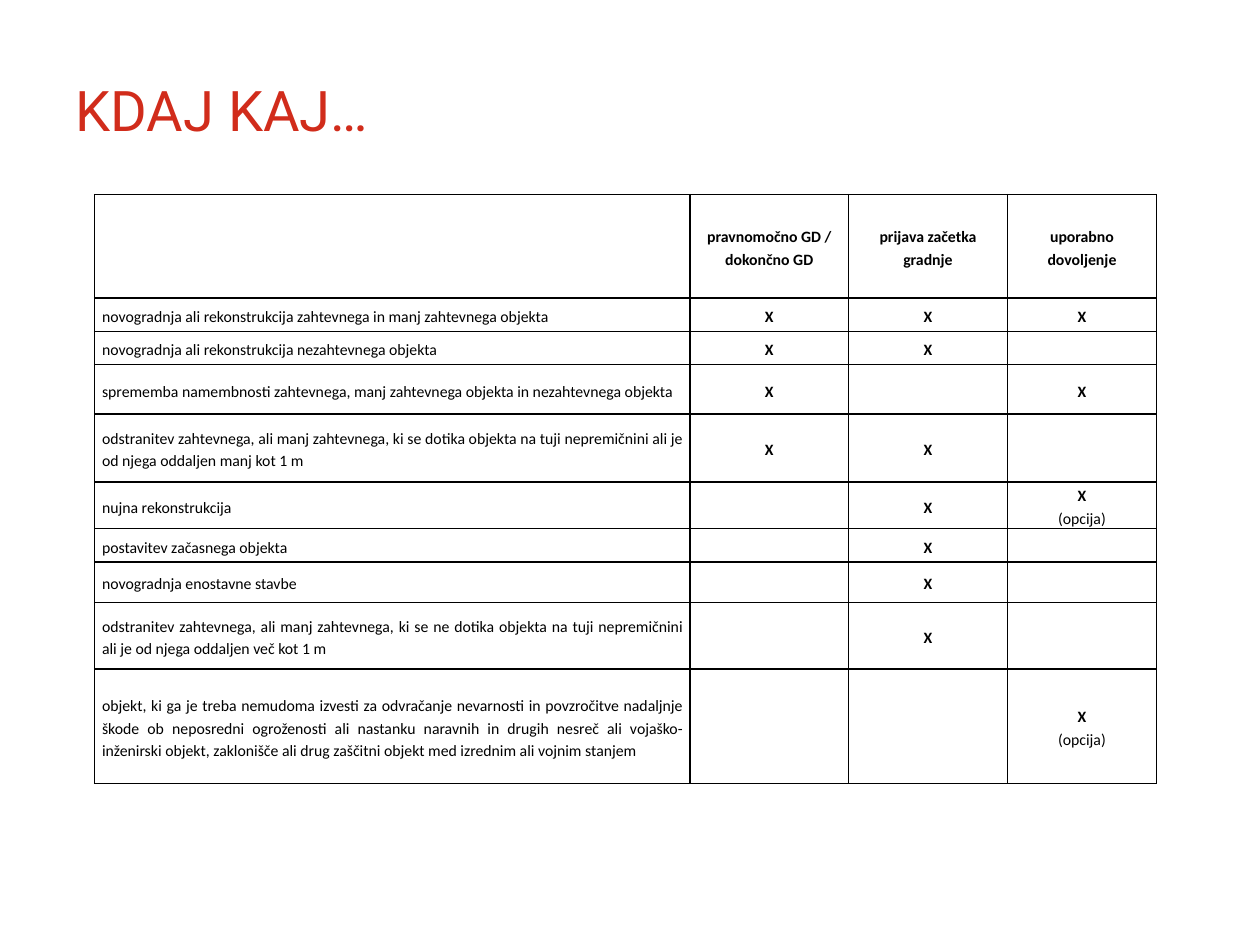
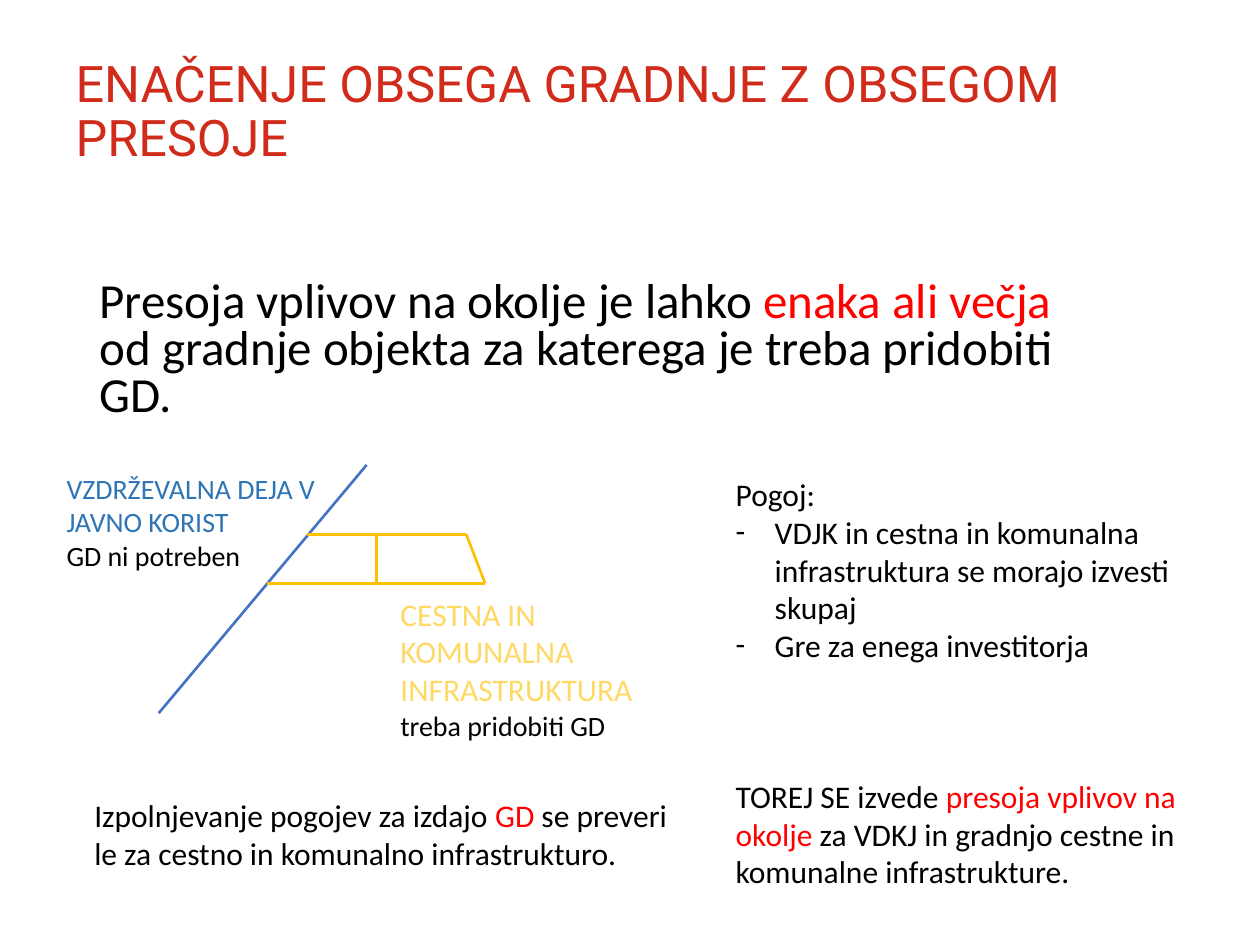
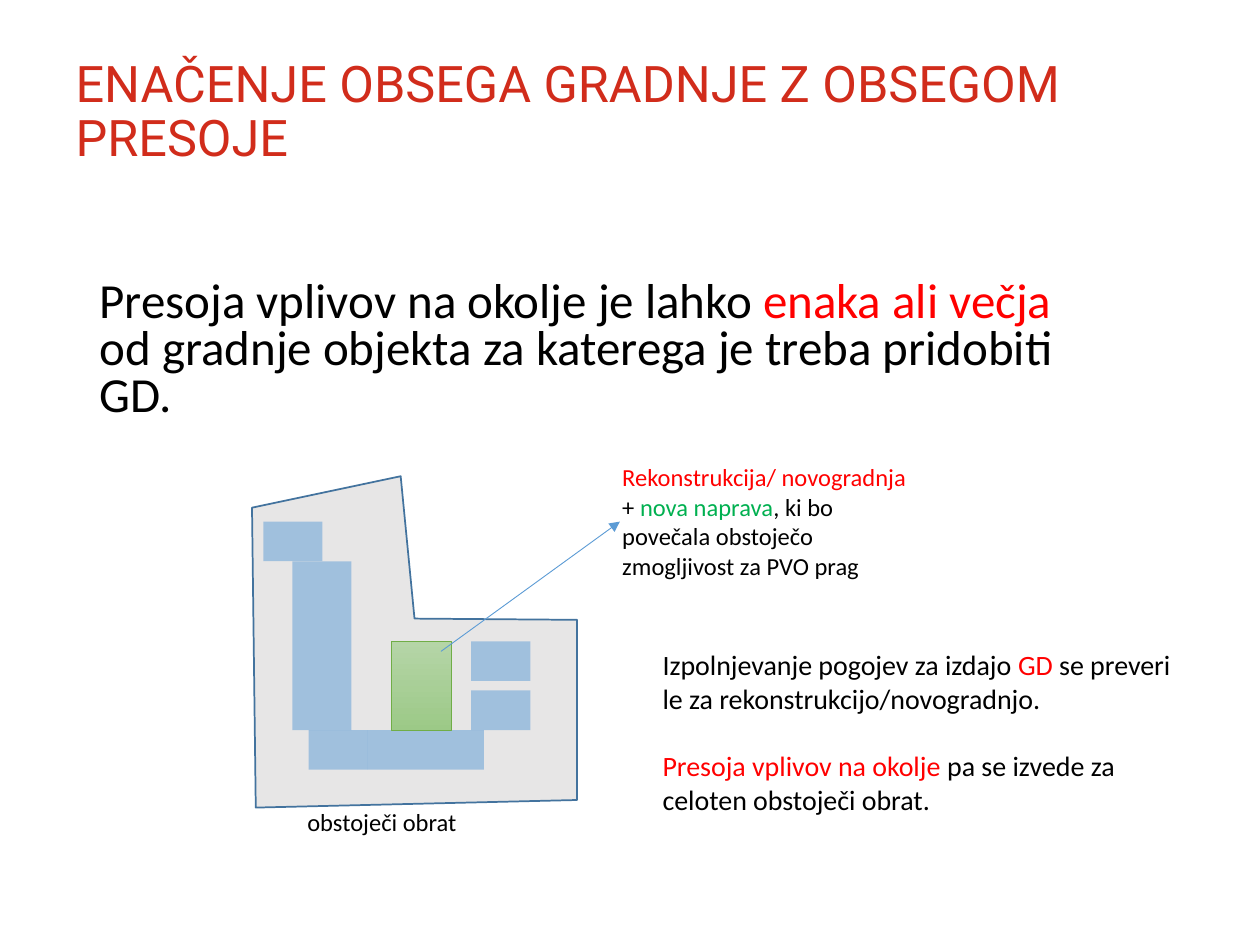
"""Build three slides on when building permits and impact assessments are required."""
from dataclasses import dataclass

from lxml.etree import SubElement
from pptx import Presentation
from pptx.dml.color import RGBColor
from pptx.enum.shapes import MSO_CONNECTOR, MSO_SHAPE
from pptx.enum.text import MSO_ANCHOR, MSO_AUTO_SIZE, PP_ALIGN
from pptx.oxml.ns import qn
from pptx.util import Emu, Inches, Pt

SLIDE_WIDTH, SLIDE_HEIGHT = Inches(10), Inches(7.5)
GRID_COLUMNS, GRID_ROWS = 100, 75

BLACK = RGBColor(0x00, 0x00, 0x00)
RED = RGBColor(0xFF, 0x00, 0x00)
TITLE_RED = RGBColor(0xD1, 0x2C, 0x1B)
GREEN = RGBColor(0x00, 0xB0, 0x50)
TEXT_BLUE = RGBColor(0x2E, 0x75, 0xB6)
ROAD_BLUE = RGBColor(0x44, 0x72, 0xC4)
STREET_GOLD = RGBColor(0xFF, 0xC0, 0x00)
TEXT_GOLD = RGBColor(0xFF, 0xD9, 0x66)
BUILDING_BLUE = RGBColor(0x5B, 0x9B, 0xD5)
PLOT_GREY = RGBColor(0xE7, 0xE6, 0xE6)
PLOT_EDGE = RGBColor(0x43, 0x73, 0x9E)
DEVICE_TOP = RGBColor(0xB5, 0xD5, 0xA7)
DEVICE_BOTTOM = RGBColor(0x9C, 0xC9, 0x87)
DEVICE_EDGE = RGBColor(0x70, 0xAD, 0x47)

BODY_FONT, TITLE_FONT = "Calibri", "Roboto"
TITLE_LAYOUT, BODY_LAYOUT = 5, 1
TABLE_SIZE = 9
SCOPE_TITLE = "ENAČENJE OBSEGA GRADNJE Z OBSEGOM PRESOJE"


@dataclass(frozen=True)
class Frame:
    """Position and size in grid columns and rows."""
    left: float
    top: float
    width: float
    height: float

    def lengths(self) -> tuple:
        """Return the frame as slide lengths."""
        return column(self.left), row(self.top), column(self.width), row(self.height)


@dataclass(frozen=True)
class Span:
    """Text in one colour."""
    text: str
    color: RGBColor = BLACK
    bold: bool = False


@dataclass(frozen=True)
class Para:
    """Paragraph of spans in one size."""
    spans: tuple
    size: float
    gap: float = 0
    dashed: bool = False


@dataclass(frozen=True)
class Note:
    """Text box with its paragraphs."""
    frame: Frame
    paras: tuple
    top_inset: float = 0.5


@dataclass(frozen=True)
class Stroke:
    """Straight line between two grid points."""
    start: tuple
    end: tuple
    color: RGBColor
    weight: float = 1.5
    arrow: bool = False


TITLE_FRAME = Frame(5, 4.15, 90, 9.7)
BODY_FRAME = Frame(6.9, 21.8, 81.7, 12.6)
STATEMENT = (
    Span("Presoja vplivov na okolje je lahko "),
    Span("enaka ali večja ", RED),
    Span("od gradnje objekta za katerega je treba pridobiti GD."),
)

TABLE_FRAME = Frame(7.5, 15.45, 84.3, 46.8)
TABLE_COLUMNS = (47.25, 12.6, 12.6, 11.85)
TABLE_ROWS = (8.2, 2.65, 2.65, 3.9, 5.4, 3.7, 2.65, 3.2, 5.3, 9.1)
HEADINGS = ("", "pravnomočno GD / dokončno GD", "prijava začetka gradnje", "uporabno dovoljenje")
YES, OPTION = "X", "X\n(opcija)"
CASES = (
    ("novogradnja ali rekonstrukcija zahtevnega in manj zahtevnega objekta", YES, YES, YES),
    ("novogradnja ali rekonstrukcija nezahtevnega objekta", YES, YES, ""),
    ("sprememba namembnosti zahtevnega, manj zahtevnega objekta in nezahtevnega objekta",
     YES, "", YES),
    ("odstranitev zahtevnega, ali manj zahtevnega, ki se dotika objekta na tuji nepremičnini "
     "ali je od njega oddaljen manj kot 1 m", YES, YES, ""),
    ("nujna rekonstrukcija", "", YES, OPTION),
    ("postavitev začasnega objekta", "", YES, ""),
    ("novogradnja enostavne stavbe", "", YES, ""),
    ("odstranitev zahtevnega, ali manj zahtevnega, ki se ne dotika objekta na tuji "
     "nepremičnini ali je od njega oddaljen več kot 1 m", "", YES, ""),
    ("objekt, ki ga je treba nemudoma izvesti za odvračanje nevarnosti in povzročitve "
     "nadaljnje škode ob neposredni ogroženosti ali nastanku naravnih in drugih nesreč ali "
     "vojaško-inženirski objekt, zaklonišče ali drug zaščitni objekt med izrednim ali vojnim "
     "stanjem", "", "", OPTION),
)

ROADS = (
    Stroke((12.6, 56.6), (29.1, 36.9), ROAD_BLUE),
    Stroke((24.4, 42.4), (37, 42.4), STREET_GOLD),
    Stroke((21.2, 46.3), (38.5, 46.3), STREET_GOLD),
    Stroke((37, 42.4), (38.5, 46.3), STREET_GOLD),
    Stroke((29.9, 42.4), (29.9, 46.3), STREET_GOLD),
)
ROAD_LABELS = (
    Note(Frame(4.3, 36.9, 22, 9.1), (
        Para((Span("VZDRŽEVALNA DEJA V JAVNO KORIST", TEXT_BLUE),), 16),
        Para((Span("GD ni potreben"),), 16),
    )),
    Note(Frame(30.8, 46.7, 23.6, 13.1), (
        Para((Span("CESTNA IN KOMUNALNA INFRASTRUKTURA", TEXT_GOLD),), 18),
        Para((Span("treba pridobiti GD"),), 16),
    )),
)
ROAD_NOTES = (
    Note(Frame(57.4, 31.2, 38.2, 43.4), (
        Para((Span("Pogoj:"),), 18),
        Para((Span("VDJK in cestna in komunalna infrastruktura se morajo izvesti skupaj"),),
             18, dashed=True),
        Para((Span("Gre za enega investitorja"),), 18, dashed=True),
        Para((Span("TOREJ SE izvede "), Span("presoja vplivov na okolje", RED),
              Span(" za VDKJ in gradnjo cestne in komunalne infrastrukture.")), 18, gap=64.5),
    ), top_inset=6.5),
    Note(Frame(6.5, 62.7, 49.4, 7.1), (
        Para((Span("Izpolnjevanje pogojev za izdajo "), Span("GD", RED),
              Span(" se preveri le za cestno in komunalno infrastrukturo.")), 18),
    )),
)

PLOT_CORNERS = ((20, 40.3), (20.3, 64.1), (45.8, 63.5), (45.8, 49.2), (32.9, 49.1), (31.8, 37.8))
BUILDINGS = (
    Frame(24.5, 57.95, 4.7, 3.15),
    Frame(37.4, 50.9, 4.7, 3.15),
    Frame(37.4, 54.8, 4.7, 3.15),
    Frame(29.2, 57.95, 9.2, 3.15),
    Frame(20.9, 41.4, 4.7, 3.15),
    Frame(23.2, 44.55, 4.7, 13.4),
)
DEVICE = Frame(31.1, 50.9, 4.7, 7.1)
DEVICE_ARROW = Stroke((35, 51.7), (49.2, 41.4), BUILDING_BLUE, 0.5, arrow=True)
PLANT_NOTES = (
    Note(Frame(48.4, 36.2, 24.6, 10.4), (
        Para((Span("Rekonstrukcija/ novogradnja ", RED), Span("+ "), Span("nova naprava", GREEN),
              Span(", ki bo povečala obstoječo zmogljivost za PVO prag")), 14),
    )),
    Note(Frame(23.4, 63.6, 19.1, 3.4), (Para((Span("obstoječi obrat"),), 14),)),
    Note(Frame(51.6, 50.9, 42.5, 17.5), (
        Para((Span("Izpolnjevanje pogojev za izdajo "), Span("GD", RED),
              Span(" se preveri le za rekonstrukcijo/novogradnjo.")), 16),
        Para((Span("Presoja vplivov na okolje", RED),
              Span(" pa se izvede za celoten obstoječi obrat.")), 16, gap=19.5),
    )),
)


def column(count: float) -> Emu:
    """Return the width of some grid columns."""
    return Emu(round(SLIDE_WIDTH * count / GRID_COLUMNS))


def row(count: float) -> Emu:
    """Return the height of some grid rows."""
    return Emu(round(SLIDE_HEIGHT * count / GRID_ROWS))


def place(shape, frame: Frame) -> None:
    """Move and size a shape to a frame."""
    shape.left, shape.top, shape.width, shape.height = frame.lengths()


def add_span(para, span: Span, size: float, font: str = BODY_FONT) -> None:
    """Append one formatted run to a paragraph."""
    run = para.add_run()
    run.text = span.text
    run.font.name = font
    run.font.size = Pt(size)
    run.font.bold = span.bold
    run.font.color.rgb = span.color


def set_bullet(para, indent: Emu = Emu(0), mark: str = "") -> None:
    """Give a paragraph a hanging mark, or none."""
    properties = para._p.get_or_add_pPr()
    properties.set("marL", str(indent))
    properties.set("indent", str(-indent))
    if mark:
        SubElement(properties, qn("a:buFont")).set("typeface", BODY_FONT)
        SubElement(properties, qn("a:buChar")).set("char", mark)
    else:
        SubElement(properties, qn("a:buNone"))


def add_page(deck, layout: int, title: str, size: float):
    """Add a slide with its formatted title."""
    page = deck.slides.add_slide(deck.slide_layouts[layout])
    box = page.shapes.title
    place(box, TITLE_FRAME)
    frame = box.text_frame
    frame.auto_size = MSO_AUTO_SIZE.NONE
    frame.vertical_anchor = MSO_ANCHOR.MIDDLE
    para = frame.paragraphs[0]
    para.alignment = PP_ALIGN.LEFT
    para.line_spacing = 0.9
    add_span(para, Span(title, TITLE_RED), size, TITLE_FONT)
    return page


def add_scope_page(deck):
    """Add a slide with the shared title and statement."""
    page = add_page(deck, BODY_LAYOUT, SCOPE_TITLE, 28.8)
    box = page.placeholders[1]
    place(box, BODY_FRAME)
    box.text_frame.auto_size = MSO_AUTO_SIZE.NONE
    para = box.text_frame.paragraphs[0]
    para.line_spacing = 0.8
    para.space_before = Pt(10)
    set_bullet(para)
    for span in STATEMENT:
        add_span(para, span, 28)
    return page


def add_note(shapes, note: Note) -> None:
    """Draw a wrapped text box."""
    frame = shapes.add_textbox(*note.frame.lengths()).text_frame
    frame.word_wrap = True
    frame.margin_top = row(note.top_inset)
    for index, item in enumerate(note.paras):
        para = frame.add_paragraph() if index else frame.paragraphs[0]
        para.space_before = Pt(item.gap)
        if item.dashed:
            set_bullet(para, column(3.1), "-")
        for span in item.spans:
            add_span(para, span, item.size)


def add_stroke(shapes, stroke: Stroke) -> None:
    """Draw a straight line or arrow."""
    (left, top), (right, bottom) = stroke.start, stroke.end
    line = shapes.add_connector(
        MSO_CONNECTOR.STRAIGHT, column(left), row(top), column(right), row(bottom))
    line.line.color.rgb = stroke.color
    line.line.width = Pt(stroke.weight)
    properties = line.element.spPr
    if stroke.arrow:
        SubElement(properties.find(qn("a:ln")), qn("a:tailEnd")).set("type", "triangle")
    SubElement(properties, qn("a:effectLst"))


def add_building(shapes, frame: Frame) -> None:
    """Draw a half-transparent building."""
    building = shapes.add_shape(MSO_SHAPE.RECTANGLE, *frame.lengths())
    building.shadow.inherit = False
    building.fill.solid()
    building.fill.fore_color.rgb = BUILDING_BLUE
    color = building.element.spPr.find(qn("a:solidFill")).find(qn("a:srgbClr"))
    SubElement(color, qn("a:alpha")).set("val", "50000")
    building.line.fill.background()


def add_plot(shapes) -> None:
    """Draw the outline of the plant's land."""
    corners = [(column(left), row(top)) for left, top in PLOT_CORNERS]
    builder = shapes.build_freeform(*corners[0])
    builder.add_line_segments(corners[1:], close=True)
    plot = builder.convert_to_shape()
    plot.shadow.inherit = False
    plot.fill.solid()
    plot.fill.fore_color.rgb = PLOT_GREY
    plot.line.color.rgb = PLOT_EDGE
    plot.line.width = Pt(1)


def add_device(shapes) -> None:
    """Draw the new device with a vertical gradient."""
    device = shapes.add_shape(MSO_SHAPE.RECTANGLE, *DEVICE.lengths())
    device.shadow.inherit = False
    device.fill.gradient()
    device.fill.gradient_angle = 270
    for stop, color in zip(device.fill.gradient_stops, (DEVICE_TOP, DEVICE_BOTTOM)):
        stop.color.rgb = color
    device.line.color.rgb = DEVICE_EDGE
    device.line.width = Pt(0.5)


def set_borders(cell) -> None:
    """Rule all four sides of a cell."""
    properties = cell._tc.get_or_add_tcPr()
    for side in ("a:lnL", "a:lnR", "a:lnT", "a:lnB"):
        line = SubElement(properties, qn(side))
        line.set("w", str(Pt(1)))
        fill = SubElement(line, qn("a:solidFill"))
        SubElement(fill, qn("a:srgbClr")).set("val", str(BLACK))


def fill_cell(cell, text: str, heading: bool, first: bool) -> None:
    """Format a table cell and write its lines."""
    set_borders(cell)
    cell.fill.background()
    cell.vertical_anchor = MSO_ANCHOR.MIDDLE
    cell.margin_left = cell.margin_right = column(0.6)
    cell.margin_top, cell.margin_bottom = row(0.1), 0
    for index, line in enumerate(text.split("\n")):
        para = cell.text_frame.add_paragraph() if index else cell.text_frame.paragraphs[0]
        para.alignment = PP_ALIGN.JUSTIFY if first else PP_ALIGN.CENTER
        para.line_spacing = Pt(13)
        if line:
            add_span(para, Span(line, bold=heading or line == YES), TABLE_SIZE)
        else:
            SubElement(para._p, qn("a:endParaRPr")).set("sz", str(TABLE_SIZE * 100))


def add_case_table(shapes) -> None:
    """Draw the table of cases and required documents."""
    records = (HEADINGS, *CASES)
    table = shapes.add_table(len(records), len(HEADINGS), *TABLE_FRAME.lengths()).table
    table.first_row = table.horz_banding = False
    for item, width in zip(table.columns, TABLE_COLUMNS):
        item.width = column(width)
    for item, height in zip(table.rows, TABLE_ROWS):
        item.height = row(height)
    for down, record in enumerate(records):
        for across, text in enumerate(record):
            fill_cell(table.cell(down, across), text, down == 0, across == 0)


def build_cases(deck) -> None:
    """Build the overview of cases."""
    page = add_page(deck, TITLE_LAYOUT, "KDAJ KAJ…", 32)
    add_case_table(page.shapes)


def build_roads(deck) -> None:
    """Build the road example."""
    page = add_scope_page(deck)
    sketch = page.shapes.add_group_shape().shapes
    for road in ROADS:
        add_stroke(sketch, road)
    for label in ROAD_LABELS:
        add_note(sketch, label)
    for note in ROAD_NOTES:
        add_note(page.shapes, note)


def build_plant(deck) -> None:
    """Build the plant example."""
    page = add_scope_page(deck)
    add_plot(page.shapes)
    for building in BUILDINGS:
        add_building(page.shapes, building)
    add_device(page.shapes)
    add_stroke(page.shapes, DEVICE_ARROW)
    for note in PLANT_NOTES:
        add_note(page.shapes, note)


def main() -> None:
    """Build and save the deck."""
    deck = Presentation()
    deck.slide_width, deck.slide_height = SLIDE_WIDTH, SLIDE_HEIGHT
    build_cases(deck)
    build_roads(deck)
    build_plant(deck)
    deck.save("out.pptx")


if __name__ == "__main__":
    main()
